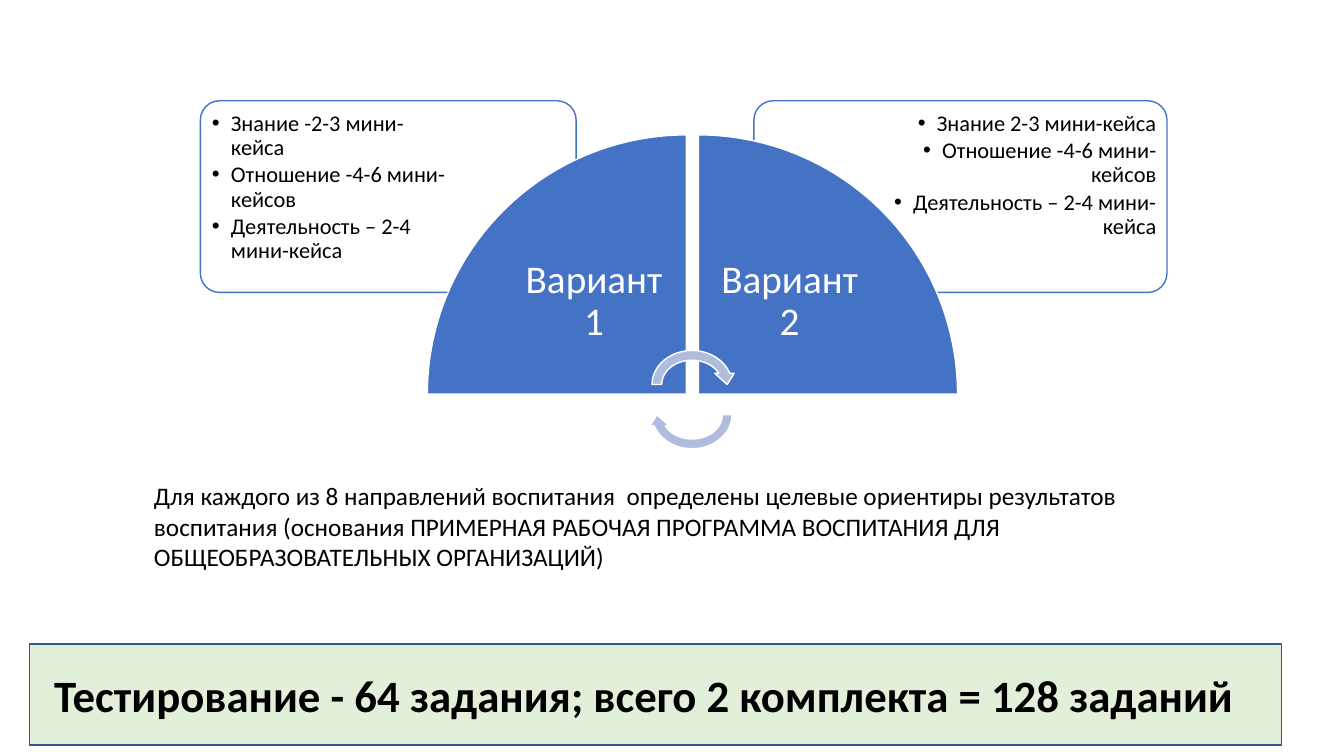
"""Builds the slide with two test variants, their mini-cases and the total of tasks."""
import pptx
import pptx.dml.color
import pptx.enum.shapes
import pptx.enum.text
import pptx.util

Cm = pptx.util.Cm
Pt = pptx.util.Pt
RGBColor = pptx.dml.color.RGBColor
SHAPE = pptx.enum.shapes.MSO_SHAPE
ALIGN = pptx.enum.text.PP_ALIGN
ANCHOR = pptx.enum.text.MSO_ANCHOR
AUTO_SIZE = pptx.enum.text.MSO_AUTO_SIZE

BLACK = RGBColor(0x00, 0x00, 0x00)
WHITE = RGBColor(0xFF, 0xFF, 0xFF)
BLUE = RGBColor(0x44, 0x72, 0xC4)
PALE_BLUE = RGBColor(0xB0, 0xBC, 0xDE)
DARK_BLUE = RGBColor(0x32, 0x54, 0x91)
PALE_GREEN = RGBColor(0xE2, 0xF0, 0xD9)


def apply(target, values):
    """Set every attribute named in the dict."""
    for name, value in values.items():
        setattr(target, name, value)


class VariantSlide:
    """Holds the style and the current slide."""

    font_name = "Calibri"
    bullet_indent = Cm(0.48)

    def __init__(self, deck):
        """Add a slide with a title and two lists."""
        self.slide = deck.slides.add_slide(deck.slide_layouts[3])
        self.shapes = self.slide.shapes

    def place(self, shape, box):
        """Move a shape to a box given in centimetres."""
        apply(shape, dict(zip(("left", "top", "width", "height"), map(Cm, box))))

    def paint(self, shape, fill, line):
        """Give a shape its fill and outline."""
        shape.fill.solid()
        shape.fill.fore_color.rgb = fill
        shape.line.color.rgb = line
        shape.line.width = Pt(1)

    def fill_text(self, shape, lines, size, color=BLACK, bold=False, frame=None, paragraph=None):
        """Fill a shape with formatted paragraphs."""
        text = shape.text_frame
        text.text = "\n".join(lines)
        apply(text, {"word_wrap": True, "auto_size": AUTO_SIZE.NONE, **(frame or {})})
        for item in text.paragraphs:
            apply(item, paragraph or {})
            apply(item.runs[0].font, {"name": self.font_name, "size": Pt(size), "bold": bold})
            item.runs[0].font.color.rgb = color

    def insets(self, size):
        """Return equal margins for a text frame."""
        return {f"margin_{side}": Cm(size) for side in ("left", "top", "right", "bottom")}

    def preset(self, kind, box, fill, line, rotation=0):
        """Draw a preset shape."""
        shape = self.shapes.add_shape(kind, *map(Cm, box))
        shape.shadow.inherit = False
        shape.rotation = rotation
        self.paint(shape, fill, line)
        return shape

    def banner(self, total, box):
        """Show the total in the title."""
        title = self.shapes.title
        self.place(title, box)
        self.paint(title, PALE_GREEN, DARK_BLUE)
        self.fill_text(title, [total], 32, bold=True,
                       frame={"vertical_anchor": ANCHOR.MIDDLE, "margin_right": Cm(0.8)},
                       paragraph={"alignment": ALIGN.CENTER})

    def cases(self, number, items, frame_box, list_box, alignment):
        """Draw a rounded frame with a bulleted list on top of it."""
        frame = self.preset(SHAPE.ROUNDED_RECTANGLE, frame_box, WHITE, BLUE)
        frame.adjustments[0] = 0.1
        body = self.slide.placeholders[number]
        self.place(body, list_box)
        self.fill_text(body, items, 16,
                       frame={"vertical_anchor": ANCHOR.TOP, **self.insets(0.18)},
                       paragraph={"alignment": alignment, "line_spacing": 0.9,
                                  "space_before": Pt(0), "space_after": Pt(2.4)})
        for item in body.text_frame.paragraphs:
            properties = item._p.get_or_add_pPr()
            properties.set("marL", str(self.bullet_indent))
            properties.set("indent", str(-self.bullet_indent))
        self.shapes.element.append(body.element)

    def text(self, words, box, size, **style):
        """Add a text box."""
        self.fill_text(self.shapes.add_textbox(*map(Cm, box)), [words], size, **style)

    def variant(self, name, wedge_left, label_left, rotation):
        """Draw a quarter disc with its name."""
        self.preset(SHAPE.PIE_WEDGE, (wedge_left, 3.4, 6.53, 6.53), BLUE, WHITE, rotation)
        self.text(name, (label_left, 5.31, 4.6, 4.6), 28, color=WHITE,
                  frame={"vertical_anchor": ANCHOR.MIDDLE, **self.insets(0.56)},
                  paragraph={"alignment": ALIGN.CENTER, "line_spacing": 0.9})


def main():
    """Build and save the slide."""
    deck = pptx.Presentation()
    apply(deck, {"slide_width": Cm(33.87), "slide_height": Cm(19.05)})
    page = VariantSlide(deck)

    page.banner("Тестирование - 64 задания; всего 2 комплекта = 128 заданий",
                (0.74, 16.23, 31.55, 2.54))
    page.cases(2, ["Знание 2-3 мини-кейса", "Отношение -4-6 мини-кейсов",
                   "Деятельность – 2-4 мини-кейса"],
               (19, 2.54, 10.41, 4.83), (22.23, 2.64, 7.09, 3.4), ALIGN.RIGHT)
    page.cases(1, ["Знание -2-3 мини-кейса", "Отношение -4-6 мини-кейсов",
                   "Деятельность – 2-4 мини-кейса"],
               (5.05, 2.54, 9.47, 4.83), (5.16, 2.64, 6.43, 3.4), ALIGN.LEFT)
    page.variant("Вариант 1", 10.77, 12.67, 0)
    page.variant("Вариант 2", 17.6, 17.6, 90)
    for top, rotation in ((8.71, 0), (9.47, 180)):
        page.preset(SHAPE.CIRCULAR_ARROW, (16.31, top, 2.26, 1.96), PALE_BLUE, WHITE, rotation)
    page.text("Для каждого из 8 направлений воспитания  определены целевые ориентиры "
              "результатов воспитания (основания ПРИМЕРНАЯ РАБОЧАЯ ПРОГРАММА ВОСПИТАНИЯ "
              "ДЛЯ ОБЩЕОБРАЗОВАТЕЛЬНЫХ ОРГАНИЗАЦИЙ)", (3.63, 11.99, 27.38, 2.57), 18)

    deck.save("out.pptx")


if __name__ == "__main__":
    main()
